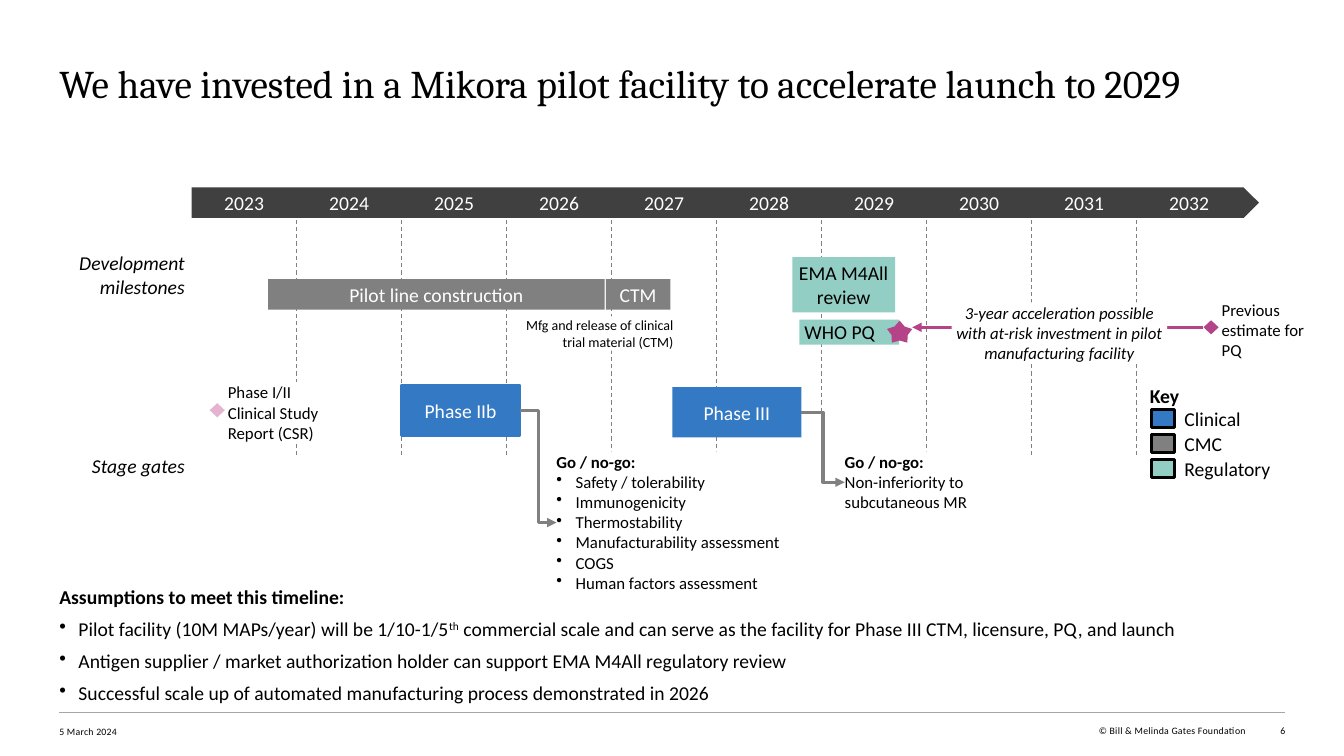
from dataclasses import dataclass

from lxml.etree import SubElement
from pptx import Presentation
from pptx.dml.color import RGBColor
from pptx.enum.dml import MSO_LINE as Dash
from pptx.enum.shapes import MSO_CONNECTOR as Link, MSO_SHAPE as Shape
from pptx.enum.text import MSO_ANCHOR as Anchor, PP_ALIGN as Align
from pptx.oxml.ns import qn
from pptx.util import Inches, Pt

WIDTH, HEIGHT = 13.33, 7.5
COLS, ROWS = 128, 72
YEAR_COLS = 10
YEARS = range(2023, 2033)
BLACK, WHITE, GREY, DARK = "000000", "FFFFFF", "808080", "404040"
CLINICAL, REGULATORY, PLUM, PINK = "3379C4", "93CEC4", "B54388", "E3B3D0"


@dataclass
class Box:
    """Hold an area in grid columns and rows."""
    x: float
    y: float
    w: float
    h: float

    def area(self, x, y, w, h):
        """Return an area offset from this one."""
        return Box(self.x + x, self.y + y, w, h)

    def point(self, x, y):
        """Return a point in slide lengths, offset from this area."""
        return across(self.x + x), down(self.y + y)

    def lengths(self):
        """Return left, top, width and height in slide lengths."""
        return across(self.x), down(self.y), across(self.w), down(self.h)


def across(columns):
    """Convert grid columns to a length."""
    return Inches(columns * WIDTH / COLS)


def down(rows):
    """Convert grid rows to a length."""
    return Inches(rows * HEIGHT / ROWS)


def color(value):
    """Convert a hex string to a colour."""
    return RGBColor.from_string(value)


def write(shape, text, size=14, ink=BLACK, font="Calibri", align=Align.LEFT, anchor=Anchor.TOP,
          italic=False, heading=False, after=0, inset=0, spacing=None):
    """Fill a shape with text: a leading • marks a bullet, ^ surrounds a superscript."""
    frame = shape.text_frame
    frame.word_wrap = True
    frame.vertical_anchor = anchor
    frame.margin_left = across(inset)
    frame.margin_top = frame.margin_right = frame.margin_bottom = 0
    for number, line_text in enumerate(text.split("\n")):
        paragraph = frame.add_paragraph() if number else frame.paragraphs[0]
        paragraph.alignment = align
        paragraph.space_after = Pt(after)
        if line_text.startswith("•"):
            properties = paragraph._p.get_or_add_pPr()
            properties.set("marL", str(Inches(0.19)))
            properties.set("indent", str(-Inches(0.19)))
            SubElement(properties, qn("a:buChar")).set("char", "•")
        for index, piece in enumerate(line_text.lstrip("• ").split("^")):
            run = paragraph.add_run()
            run.text = piece
            run.font.name, run.font.size = font, Pt(size)
            run.font.color.rgb = color(ink)
            run.font.italic = italic
            run.font.bold = heading and number == 0
            if index % 2:
                run._r.get_or_add_rPr().set("baseline", "30000")
            if spacing:
                run._r.get_or_add_rPr().set("spc", str(spacing))


def label(slide, box, text, **style):
    """Add a text box."""
    write(slide.shapes.add_textbox(*box.lengths()), text, **style)


def block(slide, box, fill, text=None, kind=Shape.RECTANGLE, edge=None, edge_width=2, **style):
    """Add a filled shape, with text if given."""
    shape = slide.shapes.add_shape(kind, *box.lengths())
    shape.shadow.inherit = False
    shape.fill.solid()
    shape.fill.fore_color.rgb = color(fill)
    if edge:
        shape.line.color.rgb = color(edge)
        shape.line.width = Pt(edge_width)
    else:
        shape.line.fill.background()
    if text:
        write(shape, text, **style)
    return shape


def bar(slide, box, fill, text, ink=WHITE, **style):
    """Add a timeline bar with centred text."""
    style = {"align": Align.CENTER, "anchor": Anchor.MIDDLE} | style
    return block(slide, box, fill, text, ink=ink, **style)


def line(slide, start, end, ink, width, kind=Link.STRAIGHT, dashed=False, arrow=False):
    """Add a connector between two points."""
    connector = slide.shapes.add_connector(kind, *start, *end)
    connector.line.color.rgb = color(ink)
    connector.line.width = Pt(width)
    if dashed:
        connector.line.dash_style = Dash.DASH
    if arrow:
        SubElement(connector.line._get_or_add_ln(), qn("a:tailEnd")).set("type", "triangle")
    SubElement(connector._element.spPr, qn("a:effectLst"))
    return connector


def add_timeline(slide, box):
    """Add the year arrow and the dashed lines between years."""
    head = 2.9
    for column in range(1, len(YEARS)):
        x = column * YEAR_COLS
        line(slide, box.point(x, 2.4), box.point(x, box.h), GREY, 0.75, dashed=True)
    arrow = block(slide, box.area(0, 0, box.w, head), DARK, kind=Shape.RIGHT_ARROW)
    arrow.adjustments[0], arrow.adjustments[1] = 1, 0.5
    for column, year in enumerate(YEARS):
        label(slide, box.area(column * YEAR_COLS, 0, YEAR_COLS, head), str(year),
              ink=WHITE, align=Align.CENTER, anchor=Anchor.MIDDLE)


def add_milestones(slide, box):
    """Add the development milestones row."""
    label(slide, box.area(0, 0, 14.6, 4.5), "Development milestones", italic=True, align=Align.RIGHT)
    bar(slide, box.area(22.54, 2.69, 32.06, 2.9), GREY, "Pilot line construction")
    bar(slide, box.area(54.7, 2.69, 6.14, 2.9), GREY, "CTM")
    block(slide, box.area(46.54, 6.24, 14.59, 3.26), WHITE,
          "Mfg and release of clinical trial material (CTM)", size=10, align=Align.RIGHT)
    bar(slide, box.area(72.46, 0.58, 9.79, 5.28), REGULATORY, "EMA M4All review", ink=BLACK)
    bar(slide, box.area(73.13, 6.53, 9.5, 2.4), REGULATORY, "WHO PQ", ink=BLACK,
        align=Align.LEFT, inset=0.48)
    star = block(slide, box.area(81.48, 6.63, 2.4, 2.11), PLUM, kind=Shape.STAR_5_POINT)
    star.adjustments[0] = 0.318
    estimate = block(slide, box.area(111.62, 6.6, 1.44, 1.34), PLUM, kind=Shape.DIAMOND)
    label(slide, box.area(113.35, 4.61, 8.16, 5.86), "Previous estimate for PQ", size=12)
    acceleration = line(slide, box.point(111.62, 7.27), box.point(83.88, 7.27), PLUM, 2.25, arrow=True)
    acceleration.begin_connect(estimate, 1)
    block(slide, box.area(87.62, 4.9, 20.54, 5.86), WHITE,
          "3-year acceleration possible with at-risk investment in pilot manufacturing facility",
          size=12, italic=True, align=Align.CENTER)


def add_stage_gates(slide, box):
    """Add the trial phases and the gates they lead to."""
    label(slide, box.area(0, 6.8, 14.6, 2.3), "Stage gates", italic=True, align=Align.RIGHT)
    block(slide, box.area(16.97, 2, 1.44, 1.34), PINK, kind=Shape.DIAMOND)
    block(slide, box.area(18.7, 0, 11.33, 5.86), WHITE, "Phase I/II\nClinical Study Report (CSR)", size=12)
    phase_two = bar(slide, box.area(35.2, 0.27, 11.33, 4.8), CLINICAL, "Phase IIb", edge=CLINICAL)
    phase_three = bar(slide, box.area(61.03, 0.46, 12.29, 4.8), CLINICAL, "Phase III")
    criteria = ("Go / no-go:\n• Safety / tolerability\n• Immunogenicity\n• Thermostability\n"
                "• Manufacturability assessment\n• COGS\n• Human factors assessment")
    first_gate = block(slide, box.area(50, 6.6, 23.6, 13.54), WHITE, criteria, size=12, heading=True)
    second_gate = block(slide, box.area(77.45, 6.6, 15.26, 5.86), WHITE,
                        "Go / no-go:\nNon-inferiority to subcutaneous MR", size=12, heading=True)
    for phase, gate in ((phase_two, first_gate), (phase_three, second_gate)):
        decision = line(slide, (0, 0), (0, 0), GREY, 2.25, kind=Link.ELBOW, arrow=True)
        decision.begin_connect(phase, 3)
        decision.end_connect(gate, 1)


def add_key(slide, box):
    """Add the colour key."""
    label(slide, box.area(0, 0, box.w, 2.3), "Key", heading=True)
    entries = (("Clinical", CLINICAL), ("CMC", GREY), ("Regulatory", REGULATORY))
    for row, (name, fill) in enumerate(entries):
        y = 2.43 + row * 2.4
        block(slide, box.area(0.13, y, 2.21, 1.73), fill, edge=BLACK, edge_width=2.25)
        label(slide, box.area(3.3, y, box.w - 3.3, 1.73), name, anchor=Anchor.MIDDLE)


def add_footer(slide, box):
    """Add the rule, date, copyright line and page number."""
    line(slide, box.point(0, 0), box.point(box.w, 0), "A6A6A6", 0.5)
    small = {"size": 7, "anchor": Anchor.MIDDLE}
    label(slide, box.area(0, 1.25, 28.8, 1.15), "5 March 2024", spacing=20, **small)
    label(slide, box.area(93, 1.15, 20, 1.15), "© Bill & Melinda Gates Foundation",
          align=Align.RIGHT, spacing=20, **small)
    label(slide, box.area(box.w - 2.7, 1.15, 2.7, 1.15), "6", align=Align.RIGHT, **small)


def main():
    """Build the slide and save it."""
    deck = Presentation()
    deck.slide_width, deck.slide_height = Inches(WIDTH), Inches(HEIGHT)
    slide = deck.slides.add_slide(deck.slide_layouts[6])
    label(slide, Box(5.65, 5.65, 116.75, 3.85),
          "We have invested in a Mikora pilot facility to accelerate launch to 2029", size=28, font="Cambria")
    add_timeline(slide, Box(18.25, 17.85, 101.65, 25.45))
    add_milestones(slide, Box(3, 23.9, 121.5, 10.8))
    add_stage_gates(slide, Box(3, 36.4, 92.7, 20.1))
    add_key(slide, Box(109.5, 36.55, 13, 9))
    label(slide, Box(5.65, 55.7, 118.3, 11),
          "Assumptions to meet this timeline:\n"
          "• Pilot facility (10M MAPs/year) will be 1/10-1/5^th^ commercial scale and can serve as "
          "the facility for Phase III CTM, licensure, PQ, and launch\n"
          "• Antigen supplier / market authorization holder can support EMA M4All regulatory review\n"
          "• Successful scale up of automated manufacturing process demonstrated in 2026",
          heading=True, after=6)
    add_footer(slide, Box(5.65, 67.87, 116.75, 2.4))
    deck.save("out.pptx")


if __name__ == "__main__":
    main()
